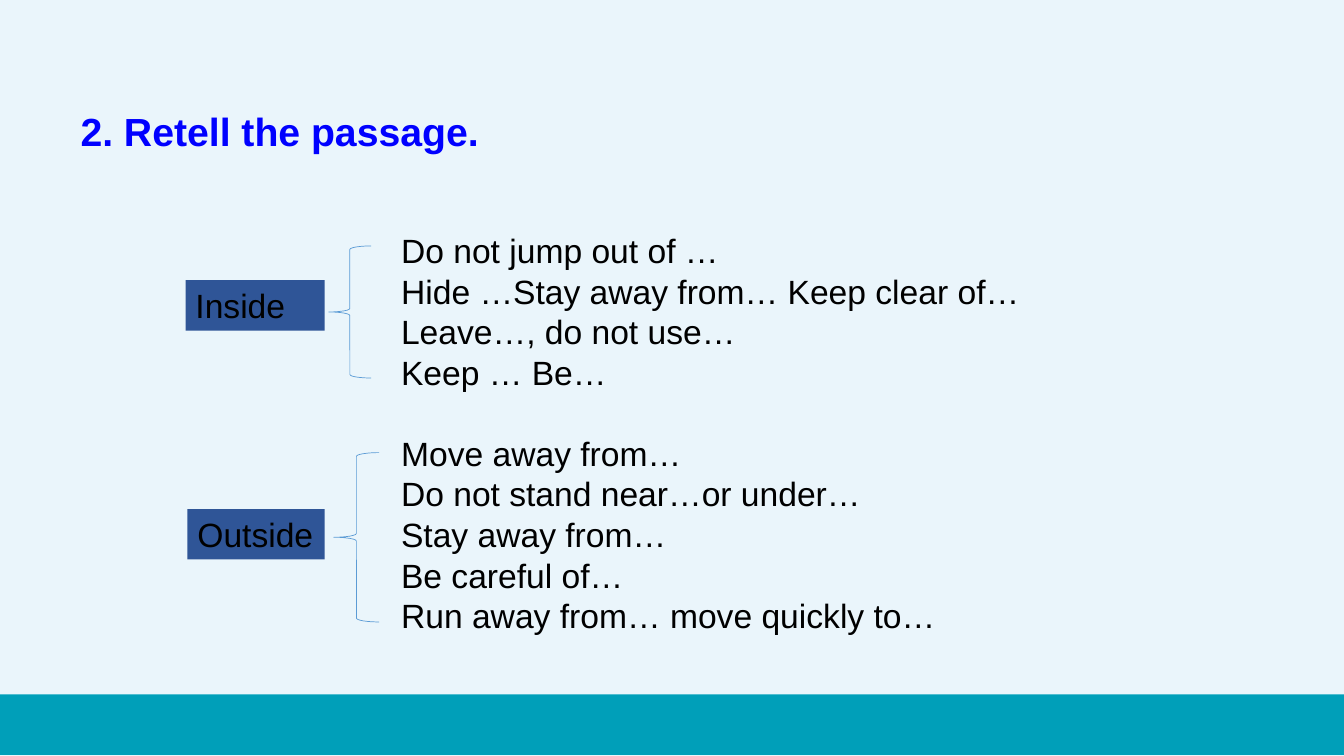
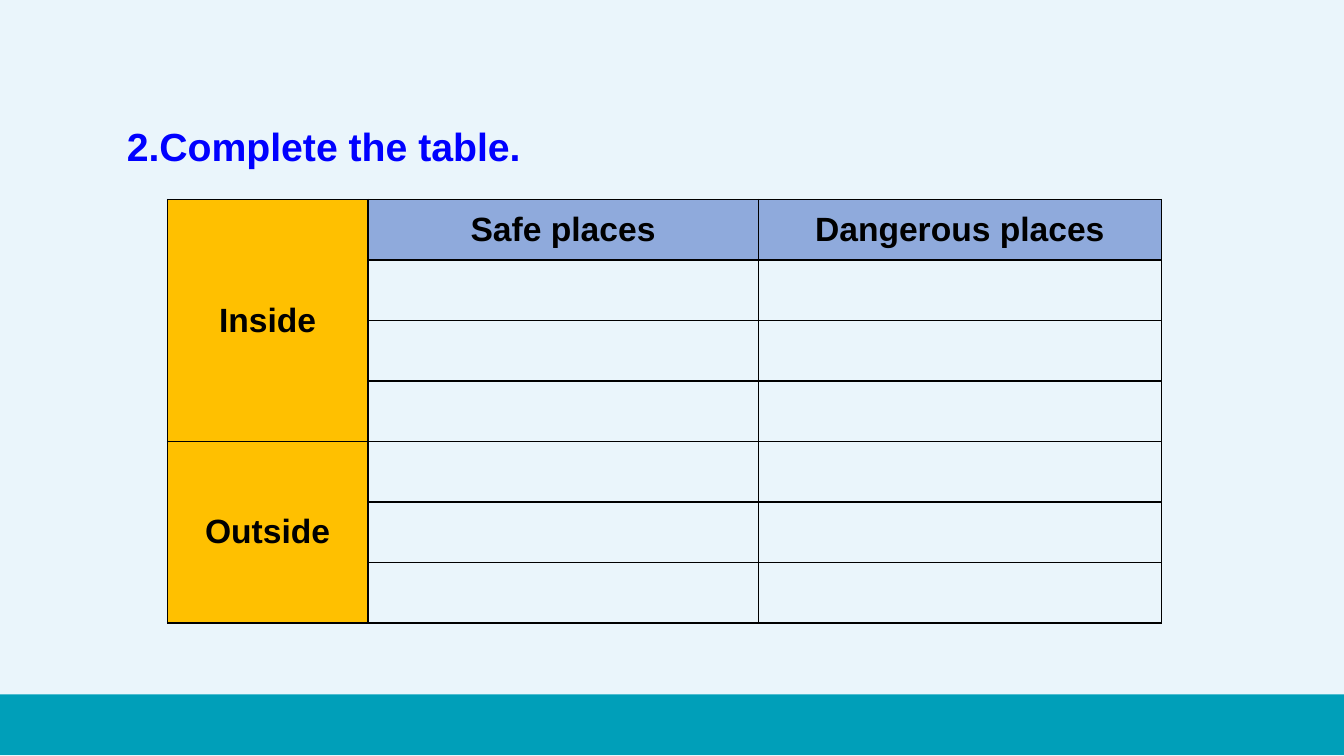
from dataclasses import dataclass

from lxml import etree
from pptx import Presentation
from pptx.dml.color import RGBColor
from pptx.enum.shapes import MSO_SHAPE
from pptx.enum.text import MSO_ANCHOR, PP_ALIGN
from pptx.oxml.ns import qn
from pptx.util import Inches, Pt

RECT = MSO_SHAPE.RECTANGLE
BRACE = MSO_SHAPE.LEFT_BRACE
LEFT, CENTER = PP_ALIGN.LEFT, PP_ALIGN.CENTER
TOP, MIDDLE = MSO_ANCHOR.TOP, MSO_ANCHOR.MIDDLE

FONT = "Arial"
PALE, TEAL, BLUE, BLACK = "EAF5FB", "009FB9", "0000FF", "000000"
NAVY, SKY, HEADER, AMBER = "2F5597", "5B9BD5", "8FAADC", "FFC000"
TITLE_SIZE, BODY_SIZE, LINE_PITCH = 28, 24, 29

Box = tuple[float, float, float, float]


@dataclass
class Group:
    label: str
    label_box: Box
    brace_box: Box
    lines_box: Box
    lines: list[str]


@dataclass
class Cell:
    row: int
    col: int
    text: str
    fill: str
    row_span: int = 1


GROUPS = [
    Group("Inside", (1.84, 2.78, 1.38, 0.5), (3.26, 2.44, 0.42, 1.31),
          (3.88, 2.23, 6.6, 1.71),
          ["Do not jump out of …", "Hide …Stay away from… Keep clear of…",
           "Leave…, do not use…", "Keep … Be…"]),
    Group("Outside", (1.86, 5.05, 1.36, 0.5), (3.31, 4.49, 0.45, 1.68),
          (3.88, 4.24, 6.6, 2.11),
          ["Move away from…", "Do not stand near…or under…", "Stay away from…",
           "Be careful of…", "Run away from… move quickly to…"]),
]

CELLS = [
    Cell(0, 0, "Inside", AMBER, 4),
    Cell(0, 1, "Safe places", HEADER),
    Cell(0, 2, "Dangerous places", HEADER),
    Cell(4, 0, "Outside", AMBER, 3),
]
COL_WIDTHS = [1.99, 3.87, 4.0]
ROW_COUNT, ROW_HEIGHT = 7, 0.6


def color(value: str) -> RGBColor:
    return RGBColor.from_string(value)


def inches(box: Box) -> list:
    return [Inches(v) for v in box]


def write(tf, lines: list[str], size: int = BODY_SIZE, ink: str = BLACK,
          bold: bool = False, align=LEFT, pitch: int | None = None) -> None:
    tf.word_wrap = True
    for i, line in enumerate(lines):
        p = tf.add_paragraph() if i else tf.paragraphs[0]
        p.alignment = align
        if pitch:
            p.line_spacing = Pt(pitch)
        r = p.add_run()
        r.text = line
        r.font.name = FONT
        r.font.size = Pt(size)
        r.font.bold = bold
        r.font.color.rgb = color(ink)


def add_rect(s, box: Box, fill: str):
    sp = s.shapes.add_shape(RECT, *inches(box))
    sp.shadow.inherit = False
    sp.fill.solid()
    sp.fill.fore_color.rgb = color(fill)
    sp.line.fill.background()
    return sp


def add_brace(s, box: Box) -> None:
    sp = s.shapes.add_shape(BRACE, *inches(box))
    sp.shadow.inherit = False
    sp.fill.background()
    sp.line.color.rgb = color(SKY)
    sp.line.width = Pt(0.5)


def add_lines(s, box: Box, lines: list[str], **style) -> None:
    write(s.shapes.add_textbox(*inches(box)).text_frame, lines, **style)


def add_slide(prs, title: str, title_box: Box):
    s = prs.slides.add_slide(prs.slide_layouts[6])
    s.background.fill.solid()
    s.background.fill.fore_color.rgb = color(PALE)
    add_rect(s, (0, 6.89, 13.33, 0.6), TEAL)
    add_lines(s, title_box, [title], size=TITLE_SIZE, ink=BLUE, bold=True)
    return s


def add_group(s, group: Group) -> None:
    add_lines(s, group.lines_box, group.lines, pitch=LINE_PITCH)
    tf = add_rect(s, group.label_box, NAVY).text_frame
    tf.vertical_anchor = TOP
    tf.margin_right = Inches(0)
    write(tf, [group.label])
    add_brace(s, group.brace_box)


def set_borders(cell) -> None:
    tc_pr = cell._tc.get_or_add_tcPr()
    for side in ("a:lnL", "a:lnR", "a:lnT", "a:lnB"):
        ln = etree.SubElement(tc_pr, qn(side), w=str(Pt(1)))
        fill = etree.SubElement(ln, qn("a:solidFill"))
        etree.SubElement(fill, qn("a:srgbClr"), val=BLACK)


def add_places_table(s, left: float, top: float) -> None:
    box = (left, top, sum(COL_WIDTHS), ROW_COUNT * ROW_HEIGHT)
    table = s.shapes.add_table(ROW_COUNT, len(COL_WIDTHS), *inches(box)).table
    table.first_row = False
    table.horz_banding = False
    for column, width in zip(table.columns, COL_WIDTHS):
        column.width = Inches(width)
    for row in table.rows:
        row.height = Inches(ROW_HEIGHT)
    for cell in table.iter_cells():
        set_borders(cell)
        cell.fill.background()
    for item in CELLS:
        cell = table.cell(item.row, item.col)
        if item.row_span > 1:
            cell.merge(table.cell(item.row + item.row_span - 1, item.col))
        cell.fill.solid()
        cell.fill.fore_color.rgb = color(item.fill)
        cell.vertical_anchor = MIDDLE
        write(cell.text_frame, [item.text], bold=True, align=CENTER)


def main() -> None:
    prs = Presentation()
    prs.slide_width = Inches(13.33)
    prs.slide_height = Inches(7.5)

    s = add_slide(prs, "2. Retell the passage.", (0.7, 1.02, 12.38, 0.57))
    for group in GROUPS:
        add_group(s, group)

    s = add_slide(prs, "2.Complete the table.", (1.16, 1.16, 11.44, 0.57))
    add_places_table(s, 1.66, 1.98)

    prs.save("out.pptx")


if __name__ == "__main__":
    main()
